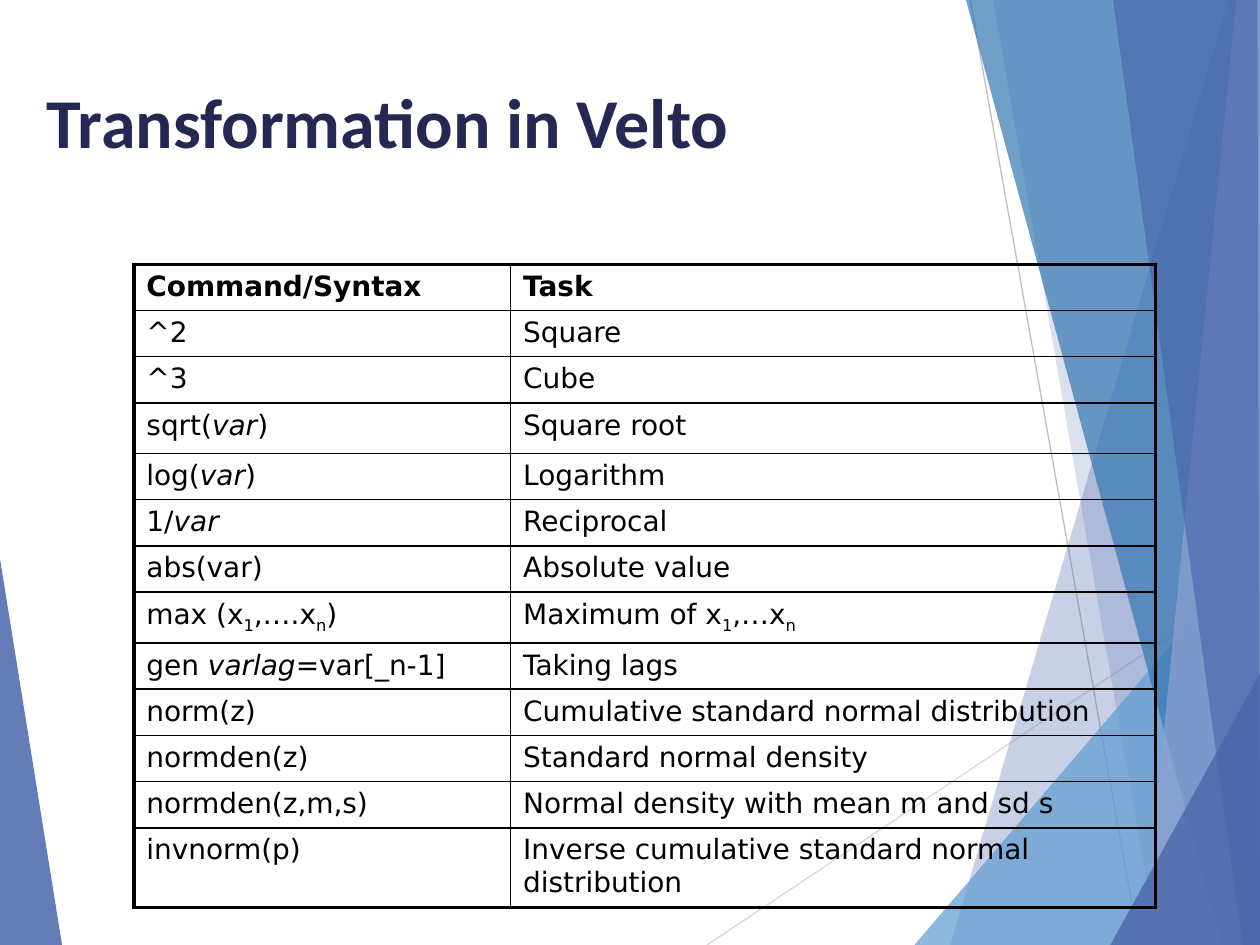
"""Build a slide with a table of data transformation commands."""
from dataclasses import dataclass

import lxml.etree
import pptx
import pptx.dml.color
import pptx.enum.shapes
import pptx.enum.text
import pptx.oxml.ns
import pptx.util

Pt = pptx.util.Pt
qn = pptx.oxml.ns.qn


@dataclass(frozen=True)
class Theme:
    navy: str = "242852"
    blue: str = "4A66AC"
    sky: str = "629DD1"
    teal: str = "3477B2"
    mist: str = "90A2CF"
    black: str = "000000"
    head: str = "Calibri"
    body: str = "DejaVu Sans"
    large: int = 40
    small: int = 16
    thin: float = 1
    thick: float = 2.25


@dataclass(frozen=True)
class Facet:
    points: tuple
    color: str
    alpha: int


@dataclass(frozen=True)
class Ray:
    start: tuple
    end: tuple
    color: str


@dataclass(frozen=True)
class Row:
    code: str
    task: str
    height: float = 26.4


THEME = Theme()
WIDE, HIGH = 720, 540

RAYS = (
    Ray((404, HIGH), (WIDE, 329.5), "D9D9D9"),
    Ray((554.5, 0), (651, HIGH), "BFBFBF"),
)
LEFT = Facet(((-0.5, 316), (35.5, HIGH), (-0.5, HIGH)), THEME.blue, 85)
RIGHT = (
    Facet(((702, 0), (543, HIGH), (WIDE, HIGH), (WIDE, 0)), THEME.blue, 30),
    Facet(((567.5, 0), (661.5, HIGH), (WIDE, HIGH), (WIDE, 0)), THEME.blue, 20),
    Facet(((522.5, HIGH), (WIDE, 309), (WIDE, HIGH)), THEME.sky, 72),
    Facet(((552, 0), (698.5, HIGH), (WIDE, HIGH), (WIDE, 0)), THEME.teal, 70),
    Facet(((706.5, 0), (653, HIGH), (WIDE, HIGH), (WIDE, 0)), THEME.mist, 70),
    Facet(((636, 0), (710, HIGH), (WIDE, HIGH), (718.5, 0)), THEME.blue, 65),
    Facet(((634.5, HIGH), (WIDE, 385), (WIDE, HIGH)), THEME.blue, 80),
)
ROWS = (
    Row("Command/Syntax", "Task"),
    Row("^2", "Square"),
    Row("^3", "Cube"),
    Row("sqrt(|/var|)", "Square root", 28.8),
    Row("log(|/var|)", "Logarithm"),
    Row("1/|/var", "Reciprocal"),
    Row("abs(var)", "Absolute value"),
    Row("max (x|_1|,….x|_n|)", "Maximum of x|_1|,…x|_n", 28.8),
    Row("gen |/varlag|=var[_n-1]", "Taking lags"),
    Row("norm(z)", "Cumulative standard normal distribution"),
    Row("normden(z)", "Standard normal density"),
    Row("normden(z,m,s)", "Normal density with mean m and sd s"),
    Row("invnorm(p)", "Inverse cumulative standard normal distribution", 45.6),
)


def rgb(code: str) -> pptx.dml.color.RGBColor:
    """Turn a hex code into a colour."""
    return pptx.dml.color.RGBColor.from_string(code)


def apply(item, values: dict) -> None:
    """Set each named value on the item."""
    for name, value in values.items():
        setattr(item, name, value)


def style(run, color: str, **values) -> None:
    """Format the font of a run."""
    apply(run.font, values)
    run.font.color.rgb = rgb(color)


def draw_facet(shapes, facet: Facet) -> None:
    """Draw one see-through polygon."""
    first, *rest = [(Pt(x), Pt(y)) for x, y in facet.points]
    pen = shapes.build_freeform(*first, scale=1.0)
    pen.add_line_segments(rest, close=True)
    shape = pen.convert_to_shape()
    shape.shadow.inherit = False
    shape.line.fill.background()
    shape.fill.solid()
    shape.fill.fore_color.rgb = rgb(facet.color)
    tint = shape._element.spPr.find(".//" + qn("a:srgbClr"))
    lxml.etree.SubElement(tint, qn("a:alpha"), val=str(facet.alpha * 1000))


def draw_ray(shapes, ray: Ray) -> None:
    """Draw one thin straight line."""
    ends = [Pt(value) for value in ray.start + ray.end]
    line = shapes.add_connector(pptx.enum.shapes.MSO_CONNECTOR.STRAIGHT, *ends)
    line.line.width = Pt(0.75)
    line.line.color.rgb = rgb(ray.color)
    lxml.etree.SubElement(line._element.spPr, qn("a:effectLst"))


def draw_title(slide, text: str) -> None:
    """Place the title above the art."""
    title = slide.shapes.title
    apply(title, dict(left=Pt(19.5), top=Pt(41), width=Pt(669), height=Pt(55.5)))
    frame = title.text_frame
    apply(frame, dict(
        text=text, word_wrap=True,
        vertical_anchor=pptx.enum.text.MSO_ANCHOR.BOTTOM,
        auto_size=pptx.enum.text.MSO_AUTO_SIZE.SHAPE_TO_FIT_TEXT))
    line = frame.paragraphs[0]
    line.alignment = pptx.enum.text.PP_ALIGN.LEFT
    style(line.runs[0], THEME.navy, name=THEME.head, size=Pt(THEME.large), bold=True)
    slide.shapes._spTree.append(title._element)


def write(cell, text: str, bold: bool) -> None:
    """Fill a cell, where / marks italic and _ marks subscript parts."""
    for index, part in enumerate(text.split("|")):
        mark = part[0] if index % 2 else ""
        run = cell.text_frame.paragraphs[0].add_run()
        run.text = part[len(mark):]
        style(run, THEME.black, name=THEME.body, size=Pt(THEME.small),
              bold=bold, italic=mark == "/")
        if mark == "_":
            run._r.get_or_add_rPr().set("baseline", "-25000")


def frame_cell(cell, edges: dict) -> None:
    """Clear the fill and rule the four edges, thick where flagged."""
    props = cell._tc.get_or_add_tcPr()
    for side, outer in edges.items():
        width = Pt(THEME.thick if outer else THEME.thin)
        edge = lxml.etree.SubElement(props, qn("a:ln" + side), w=str(int(width)))
        fill = lxml.etree.SubElement(edge, qn("a:solidFill"))
        lxml.etree.SubElement(fill, qn("a:srgbClr"), val=THEME.black)
    cell.fill.background()


def draw_table(shapes, rows: tuple) -> None:
    """Draw the ruled table of commands."""
    widths = (215.3, 368.6)
    total = sum(row.height for row in rows)
    table = shapes.add_table(len(rows), len(widths), Pt(76.5), Pt(151),
                             Pt(sum(widths)), Pt(total)).table
    apply(table, dict(first_row=False, horz_banding=False))
    for column, width in zip(table.columns, widths):
        column.width = Pt(width)
    for r, row in enumerate(rows):
        table.rows[r].height = Pt(row.height)
        for c, text in enumerate((row.code, row.task)):
            cell = table.cell(r, c)
            write(cell, text, bold=r == 0)
            frame_cell(cell, dict(L=c == 0, R=c == len(widths) - 1,
                                  T=r == 0, B=r == len(rows) - 1))


def main() -> None:
    """Build and save the slide."""
    deck = pptx.Presentation()
    apply(deck, dict(slide_width=Pt(WIDE), slide_height=Pt(HIGH)))
    slide = deck.slides.add_slide(deck.slide_layouts[5])
    draw_facet(slide.shapes, LEFT)
    for ray in RAYS:
        draw_ray(slide.shapes, ray)
    for facet in RIGHT:
        draw_facet(slide.shapes, facet)
    draw_title(slide, "Transformation in Velto")
    draw_table(slide.shapes, ROWS)
    deck.save("out.pptx")


if __name__ == "__main__":
    main()
